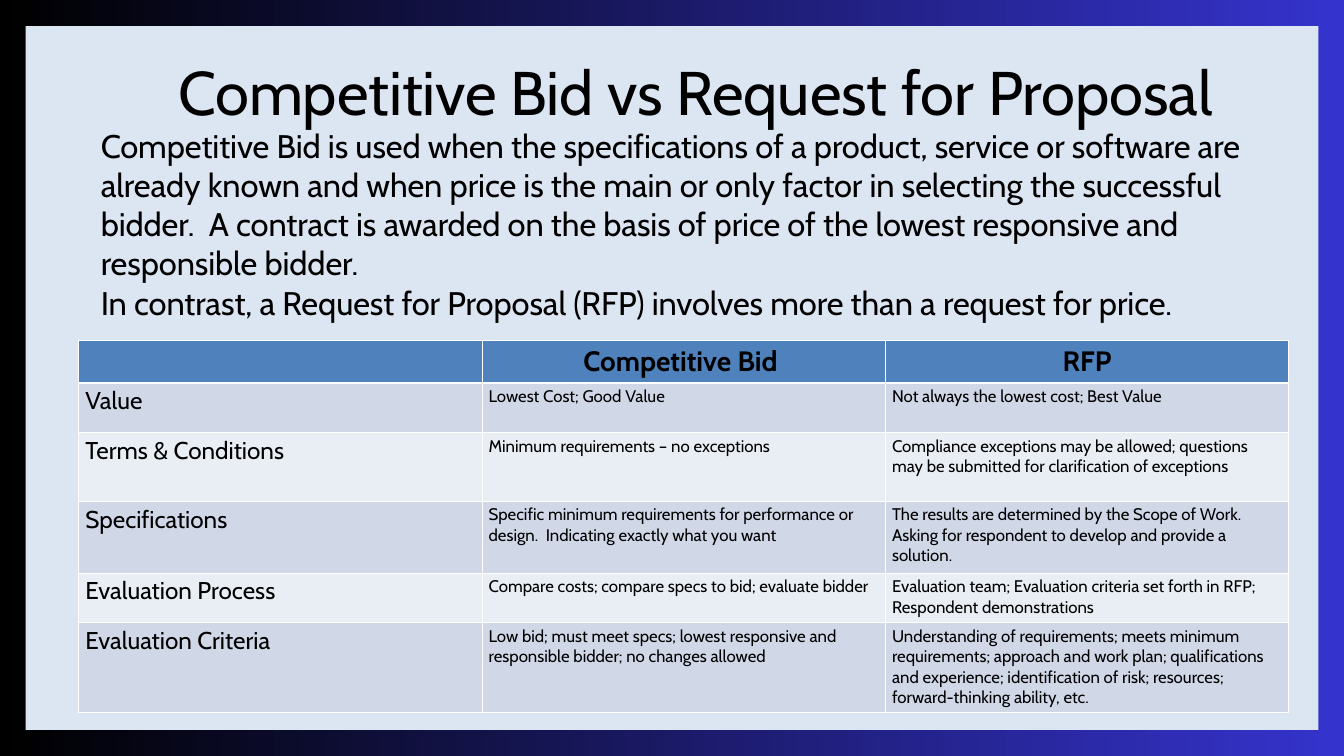
from lxml.etree import SubElement
from pptx import Presentation
from pptx.dml.color import RGBColor as RGB
from pptx.enum.shapes import MSO_SHAPE as Shape
from pptx.enum.text import PP_ALIGN as Align
from pptx.oxml.ns import qn
from pptx.util import Pt

COLORS = {
    "black": "000000",
    "blue": "3533CD",
    "panel": "DCE6F2",
    "header": "4F81BD",
    "odd": "D0D8E8",
    "even": "E9EDF4",
    "white": "FFFFFF",
}

TITLE = "Competitive Bid vs Request for Proposal"
INTRODUCTION = [
    "Competitive Bid is used when the specifications of a product, service or software "
    "are already known and when price is the main or only factor in selecting the "
    "successful bidder.  A contract is awarded on the basis of price of the lowest "
    "responsive and responsible bidder.",
    "In contrast, a Request for Proposal (RFP) involves more than a request for price.",
]
COMPARISON = [
    ("", "Competitive Bid ", "RFP"),
    ("Value", "Lowest Cost; Good Value", "Not always the lowest cost; Best Value"),
    ("Terms & Conditions", "Minimum requirements – no exceptions",
     "Compliance exceptions may be allowed; questions may be submitted for "
     "clarification of exceptions"),
    ("Specifications",
     "Specific minimum requirements for performance or design.\u00a0 "
     "Indicating exactly what you want",
     "The results are determined by the Scope of Work. Asking for respondent to "
     "develop and provide a solution."),
    ("Evaluation Process", "Compare costs; compare specs to bid; evaluate bidder",
     "Evaluation team; Evaluation criteria set forth in RFP; Respondent demonstrations"),
    ("Evaluation Criteria",
     "Low bid; must meet specs; lowest responsive and responsible bidder; "
     "no changes allowed",
     "Understanding of requirements; meets minimum requirements; approach and work "
     "plan; qualifications and experience; identification of risk; resources; "
     "forward-thinking ability, etc."),
]
ROW_HEIGHTS = [45.4, 53.3, 73.4, 77, 53.3, 95.8]


def color(name):
    return RGB.from_string(COLORS[name])


class SlideBuilder:
    font_name = "Cabin"

    def __init__(self, slide):
        self.slide = slide

    def background(self, start, end):
        fill = self.slide.background.fill
        fill.gradient()
        fill.gradient_angle = 0
        for stop, name, position in zip(fill.gradient_stops, (start, end), (0, 1)):
            stop.color.rgb = color(name)
            stop.position = position

    def panel(self, left, top, width, height, fill):
        shape = self.slide.shapes.add_shape(
            Shape.RECTANGLE, Pt(left), Pt(top), Pt(width), Pt(height))
        shape.shadow.inherit = False
        shape.fill.solid()
        shape.fill.fore_color.rgb = color(fill)
        shape.line.fill.background()

    def style(self, paragraph, size, align=Align.LEFT, bold=False):
        paragraph.alignment = align
        font = paragraph.font
        font.name, font.size, font.bold = self.font_name, Pt(size), bold
        font.color.rgb = color("black")

    def text(self, left, top, width, height, lines, size, align=Align.LEFT, spacing=None):
        box = self.slide.shapes.add_textbox(Pt(left), Pt(top), Pt(width), Pt(height))
        frame = box.text_frame
        frame.word_wrap = True
        frame.margin_left = frame.margin_top = frame.margin_right = frame.margin_bottom = 0
        frame.text = "\n".join(lines)
        for paragraph in frame.paragraphs:
            self.style(paragraph, size, align)
            if spacing:
                paragraph.line_spacing = Pt(spacing)
            # Tighten the letters by 0.1 pt
            paragraph._p.pPr.defRPr.set("spc", "-10")

    def borders(self, cell, widths):
        properties = cell._tc.get_or_add_tcPr()
        # Border lines come before the fill in the schema
        for index, (side, width) in enumerate(widths.items()):
            line = SubElement(properties, qn(f"a:ln{side}"), w=str(Pt(width)))
            properties.insert(index, line)
            fill = SubElement(line, qn("a:solidFill"))
            SubElement(fill, qn("a:srgbClr"), val=COLORS["white"])

    def table(self, left, top, column_width, row_heights, rows):
        width = column_width * len(rows[0])
        table = self.slide.shapes.add_table(
            len(rows), len(rows[0]), Pt(left), Pt(top), Pt(width), Pt(sum(row_heights))).table
        for column in table.columns:
            column.width = Pt(column_width)
        for r, (height, row) in enumerate(zip(row_heights, rows)):
            table.rows[r].height = Pt(height)
            band = "header" if r == 0 else "odd" if r % 2 else "even"
            for c, content in enumerate(row):
                cell = table.cell(r, c)
                cell.fill.solid()
                cell.fill.fore_color.rgb = color(band)
                self.borders(cell, {"L": 1, "R": 1, "T": 3 if r == 1 else 1,
                                    "B": 3 if r == 0 else 1})
                if not content:
                    continue
                cell.text = content
                paragraph = cell.text_frame.paragraphs[0]
                if r == 0:
                    self.style(paragraph, 30, Align.CENTER, bold=True)
                else:
                    self.style(paragraph, 26 if c == 0 else 18)


def main():
    presentation = Presentation()
    presentation.slide_width, presentation.slide_height = Pt(1440), Pt(810)
    builder = SlideBuilder(presentation.slides.add_slide(presentation.slide_layouts[6]))

    # Gradient frame and light panel
    builder.background("black", "blue")
    builder.panel(27.5, 28, 1385, 754, "panel")

    # Title and introduction
    builder.text(142.5, 80.5, 1206, 60.5, [TITLE], 66, Align.CENTER, spacing=56.7)
    builder.text(108, 134.6, 1224, 212.4, INTRODUCTION, 35)

    # Comparison table
    builder.table(84.2, 365, 432.2, ROW_HEIGHTS, COMPARISON)

    presentation.save("out.pptx")


if __name__ == "__main__":
    main()
